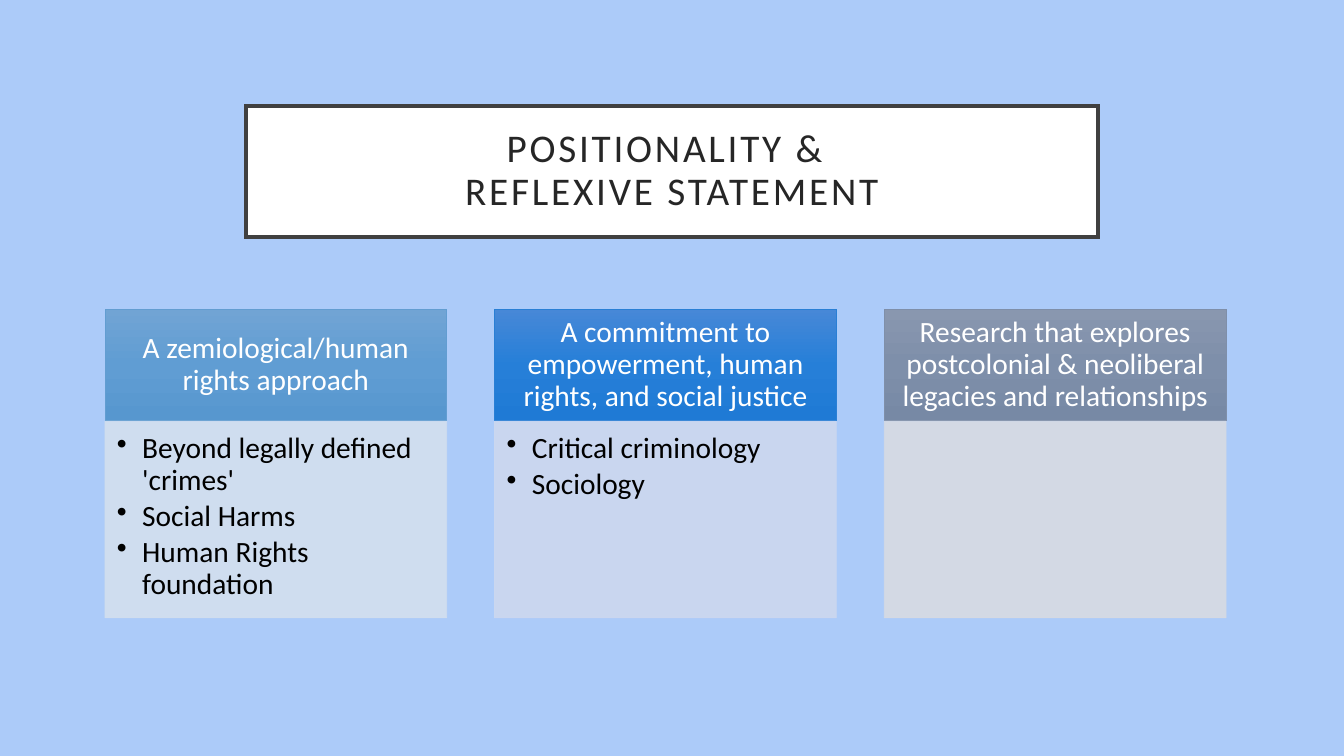
import copy

import pptx
import pptx.dml.color
import pptx.enum.shapes
import pptx.enum.text
import pptx.oxml.ns
import pptx.util
from lxml import etree
from pptx.util import Inches

Align = pptx.enum.text.PP_ALIGN
Anchor = pptx.enum.text.MSO_ANCHOR
qn = pptx.oxml.ns.qn


def color(value):
    return pptx.dml.color.RGBColor.from_string(value)


class Slide:
    font = "Calibri"
    text_size = 21
    title_size = 28

    def __init__(self, deck, background):
        self.page = deck.slides.add_slide(deck.slide_layouts[5])
        fill = self.page.background.fill
        fill.solid()
        fill.fore_color.rgb = color(background)

    def place(self, shape, left, top, width, height):
        shape.left, shape.top = Inches(left), Inches(top)
        shape.width, shape.height = Inches(width), Inches(height)

    def outline(self, shape, line, weight):
        shape.line.color.rgb = color(line)
        shape.line.width = pptx.util.Pt(weight)
        etree.SubElement(shape._element.spPr.find(qn("a:ln")), qn("a:miter"))

    def frame(self, shape, insets, anchor):
        frame = shape.text_frame
        frame.word_wrap = True
        frame.auto_size = pptx.enum.text.MSO_AUTO_SIZE.NONE
        frame.vertical_anchor = anchor
        (frame.margin_left, frame.margin_top,
         frame.margin_right, frame.margin_bottom) = map(Inches, insets)
        return frame

    def style(self, para, size, ink, align):
        para.alignment = align
        para.line_spacing = 0.9
        for span in para.runs:
            span.font.name = self.font
            span.font.size = pptx.util.Pt(size)
            span.font.color.rgb = color(ink)

    def bullet(self, para):
        props = para._p.get_or_add_pPr()
        props.set("marL", str(Inches(0.25)))
        props.set("indent", str(Inches(-0.25)))
        etree.SubElement(props, qn("a:buChar")).set("char", "•")

    def translucent(self, fill, percent):
        for tint in fill.iter(qn("a:srgbClr")):
            etree.SubElement(tint, qn("a:alpha")).set("val", str(percent * 1000))

    def title(self, text, left, top, width, height):
        box = self.page.shapes.title
        self.place(box, left, top, width, height)
        box.fill.solid()
        box.fill.fore_color.rgb = color("FFFFFF")
        self.outline(box, "404040", 2.5)
        # A line break stays inside the one paragraph
        para = self.frame(box, [0.2] * 4, Anchor.MIDDLE).paragraphs[0]
        para.text = text
        self.style(para, self.title_size, "262626", Align.CENTER)
        for span in para.runs:
            span._r.get_or_add_rPr().set("spc", "200")
        for line_break in para._p.findall(qn("a:br")):
            line_break.append(copy.deepcopy(para.runs[0]._r.rPr))

    def rectangle(self, left, top, width, height, line):
        box = self.page.shapes.add_shape(
            pptx.enum.shapes.MSO_SHAPE.RECTANGLE, Inches(left), Inches(top),
            Inches(width), Inches(height))
        box.shadow.inherit = False
        self.outline(box, line, 0.5)
        return box

    def header(self, text, left, top, width, height, shades, line):
        box = self.rectangle(left, top, width, height, line)
        box.fill.gradient()
        box.fill.gradient_angle = 270
        stops = box._element.spPr.find(".//" + qn("a:gsLst"))
        stops.insert(1, copy.deepcopy(stops[0]))
        for stop, position, shade in zip(box.fill.gradient_stops, (0, 0.5, 1), shades):
            stop.position = position
            stop.color.rgb = color(shade)
        frame = self.frame(box, [0.16, 0.09, 0.16, 0.09], Anchor.MIDDLE)
        frame.text = text
        self.style(frame.paragraphs[0], self.text_size, "FFFFFF", Align.CENTER)

    def body(self, points, left, top, width, height, tint):
        box = self.rectangle(left, top, width, height, tint)
        box.fill.solid()
        box.fill.fore_color.rgb = color(tint)
        self.translucent(box._element.spPr, 90)
        if not points:
            return
        frame = self.frame(box, [0.12, 0.12, 0.16, 0.18], Anchor.TOP)
        frame.text = "\n".join(points)
        for para in frame.paragraphs:
            self.style(para, self.text_size, "000000", Align.LEFT)
            para.space_after = pptx.util.Pt(3.15)
            self.bullet(para)


# Heading, bullet points, header gradient, header line, body tint
COLUMNS = [
    ("A zemiological/human rights approach",
     ["Beyond legally defined 'crimes'", "Social Harms", "Human Rights foundation"],
     ("71A4D4", "609DD3", "5797CF"), "629DD1", "D3DFEE"),
    ("A commitment to empowerment, human rights, and social justice",
     ["Critical criminology", "Sociology"],
     ("4788D7", "267FD8", "1F7AD5"), "297FD5", "CDD8EF"),
    ("Research that explores postcolonial & neoliberal legacies and relationships",
     [],
     ("8997AF", "7E8FAA", "7789A5"), "7F8FA9", "D8DBE2"),
]


def main():
    deck = pptx.Presentation()
    deck.slide_width, deck.slide_height = Inches(13.33), Inches(7.5)
    slide = Slide(deck, "ACCBF9")

    # Title
    slide.title("POSITIONALITY & \nREFLEXIVE STATEMENT", 2.44, 1.05, 8.45, 1.3)

    # Three columns, each a header above a body
    first, last, width = 1.04, 8.77, 3.39
    step = (last - first) / (len(COLUMNS) - 1)
    for index, (heading, points, shades, line, tint) in enumerate(COLUMNS):
        left = first + index * step
        slide.header(heading, left, 3.07, width, 1.1, shades, line)
        slide.body(points, left, 4.18, width, 1.95, tint)

    deck.save("out.pptx")


if __name__ == "__main__":
    main()
